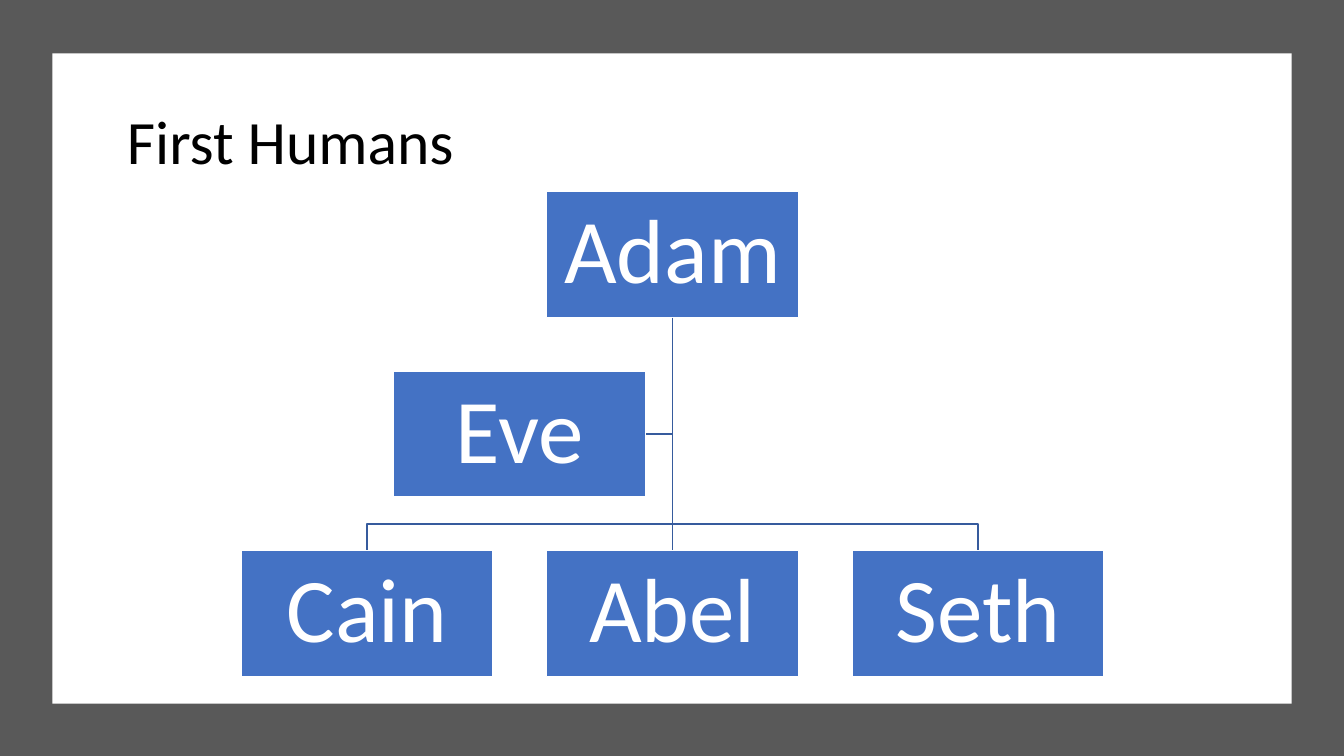
from dataclasses import dataclass

from lxml import etree
from pptx import Presentation
from pptx.dml.color import RGBColor
from pptx.enum.shapes import MSO_CONNECTOR, MSO_SHAPE
from pptx.enum.text import MSO_ANCHOR, PP_ALIGN
from pptx.oxml.ns import qn
from pptx.util import Inches, Pt

RECT = MSO_SHAPE.RECTANGLE
STRAIGHT = MSO_CONNECTOR.STRAIGHT
MIDDLE = MSO_ANCHOR.MIDDLE
CENTER = PP_ALIGN.CENTER
BOTTOM, TOP = 2, 0


@dataclass(frozen=True)
class Theme:
    frame: str = "595959"
    paper: str = "FFFFFF"
    box: str = "4472C4"
    line: str = "365B9D"
    ink: str = "000000"
    font: str = "Calibri"
    title: int = 44
    name: int = 65
    stroke: int = 1


THEME = Theme()
WIDE, HIGH = 13.33, 7.5
BOX_W, BOX_H = 2.5, 1.25
MID, TOP_ROW = 6.67, 1.9
COL_STEP, ROW_STEP = 3.03, 1.78
BAR = 5.2

PEOPLE = [
    ("Adam", 0, 0),
    ("Cain", -1, 2),
    ("Abel", 0, 2),
    ("Seth", 1, 2),
    ("Eve", -0.5, 1),
]


def color(code):
    return RGBColor.from_string(code)


def col_x(col):
    return MID + col * COL_STEP


def row_y(row):
    return TOP_ROW + row * ROW_STEP


def style(line, code):
    line.color.rgb = color(code)
    line.width = Pt(THEME.stroke)


def add_rect(slide, left, top, width, height, fill):
    rect = slide.shapes.add_shape(
        RECT, Inches(left), Inches(top), Inches(width), Inches(height))
    rect.shadow.inherit = False
    rect.fill.solid()
    rect.fill.fore_color.rgb = color(fill)
    rect.line.fill.background()
    return rect


def set_text(frame, text, size, code):
    frame.text = text
    para = frame.paragraphs[0]
    font = para.runs[0].font
    font.name = THEME.font
    font.size = Pt(size)
    font.color.rgb = color(code)
    return para


def add_box(slide, name, col, row):
    box = add_rect(slide, col_x(col) - BOX_W / 2, row_y(row),
                   BOX_W, BOX_H, THEME.box)
    style(box.line, THEME.paper)
    frame = box.text_frame
    frame.word_wrap = True
    frame.vertical_anchor = MIDDLE
    frame.margin_left = frame.margin_right = Inches(0.05)
    frame.margin_top = frame.margin_bottom = Inches(0.05)
    para = set_text(frame, name, THEME.name, THEME.paper)
    para.alignment = CENTER
    para.line_spacing = 0.9
    return box


def add_elbow(slide, points):
    start, *rest = [(Inches(x), Inches(y)) for x, y in points]
    form = slide.shapes.build_freeform(*start)
    form.add_line_segments(rest, close=False)
    elbow = form.convert_to_shape()
    elbow.shadow.inherit = False
    elbow.fill.background()
    style(elbow.line, THEME.line)


def add_trunk(slide, upper, lower):
    trunk = slide.shapes.add_connector(STRAIGHT, 0, 0, 0, 0)
    trunk.begin_connect(upper, BOTTOM)
    trunk.end_connect(lower, TOP)
    style(trunk.line, THEME.line)
    etree.SubElement(trunk.element.spPr, qn("a:effectLst"))


def add_title(slide, text):
    title = slide.shapes.add_textbox(
        Inches(1.16), Inches(0.97), Inches(4.22), Inches(0.84))
    title.text_frame.word_wrap = True
    para = set_text(title.text_frame, text, THEME.title, THEME.ink)
    para.space_after = Pt(6)


def add_tree(slide):
    start = (MID, row_y(0) + BOX_H)
    eve_y = row_y(1) + BOX_H / 2
    add_elbow(slide, [start, (MID, eve_y),
                      (col_x(-0.5) + BOX_W / 2, eve_y)])
    for col in (1, -1):
        add_elbow(slide, [start, (MID, BAR), (col_x(col), BAR),
                          (col_x(col), row_y(2))])
    boxes = {name: add_box(slide, name, col, row)
             for name, col, row in PEOPLE}
    add_trunk(slide, boxes["Adam"], boxes["Abel"])


def main():
    deck = Presentation()
    deck.slide_width = Inches(WIDE)
    deck.slide_height = Inches(HIGH)
    slide = deck.slides.add_slide(deck.slide_layouts[6])
    add_rect(slide, 0, 0, WIDE, HIGH, THEME.frame)
    add_rect(slide, 0.52, 0.53, 12.29, 6.45, THEME.paper)
    add_tree(slide)
    add_title(slide, "First Humans")
    deck.save("out.pptx")


if __name__ == "__main__":
    main()
